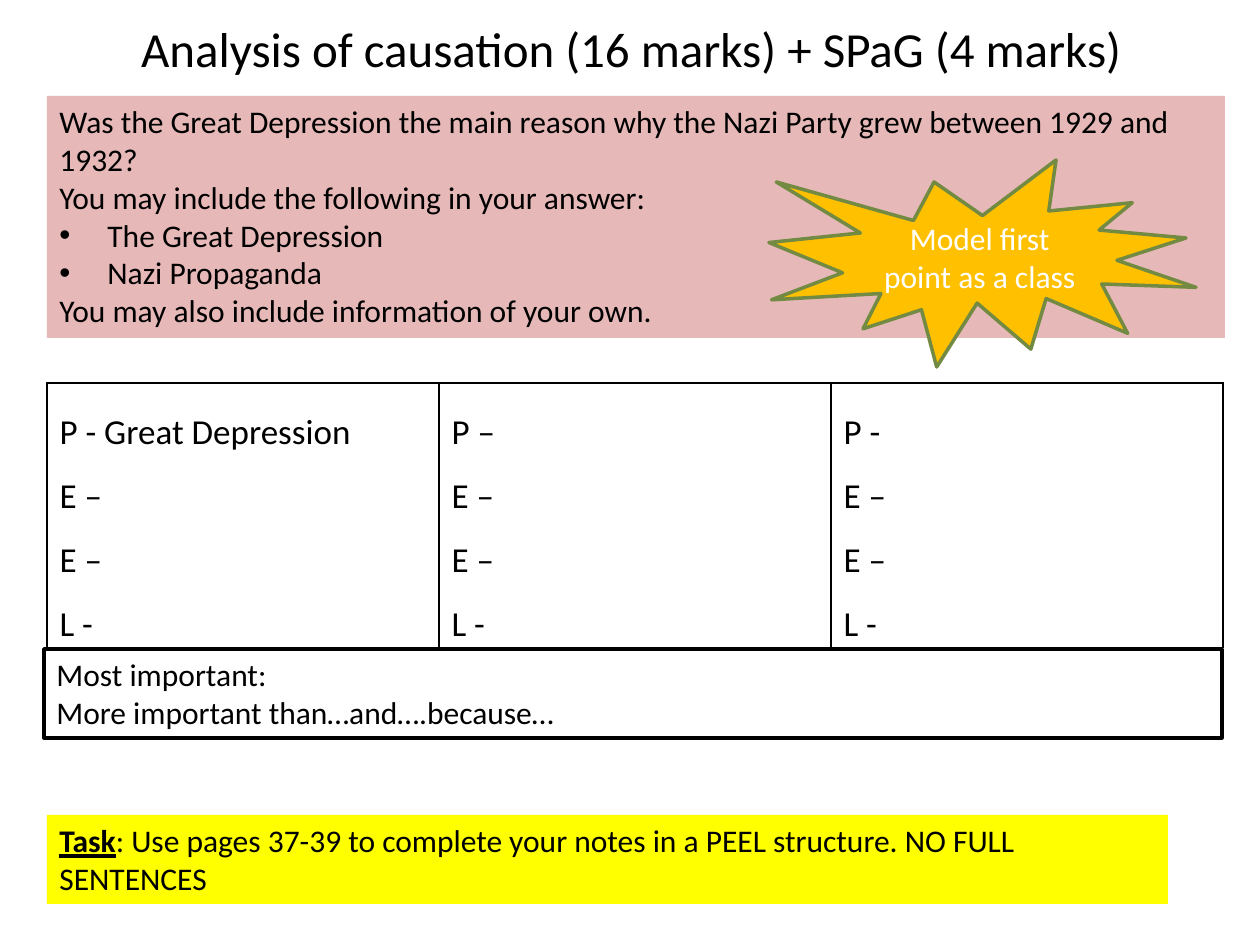
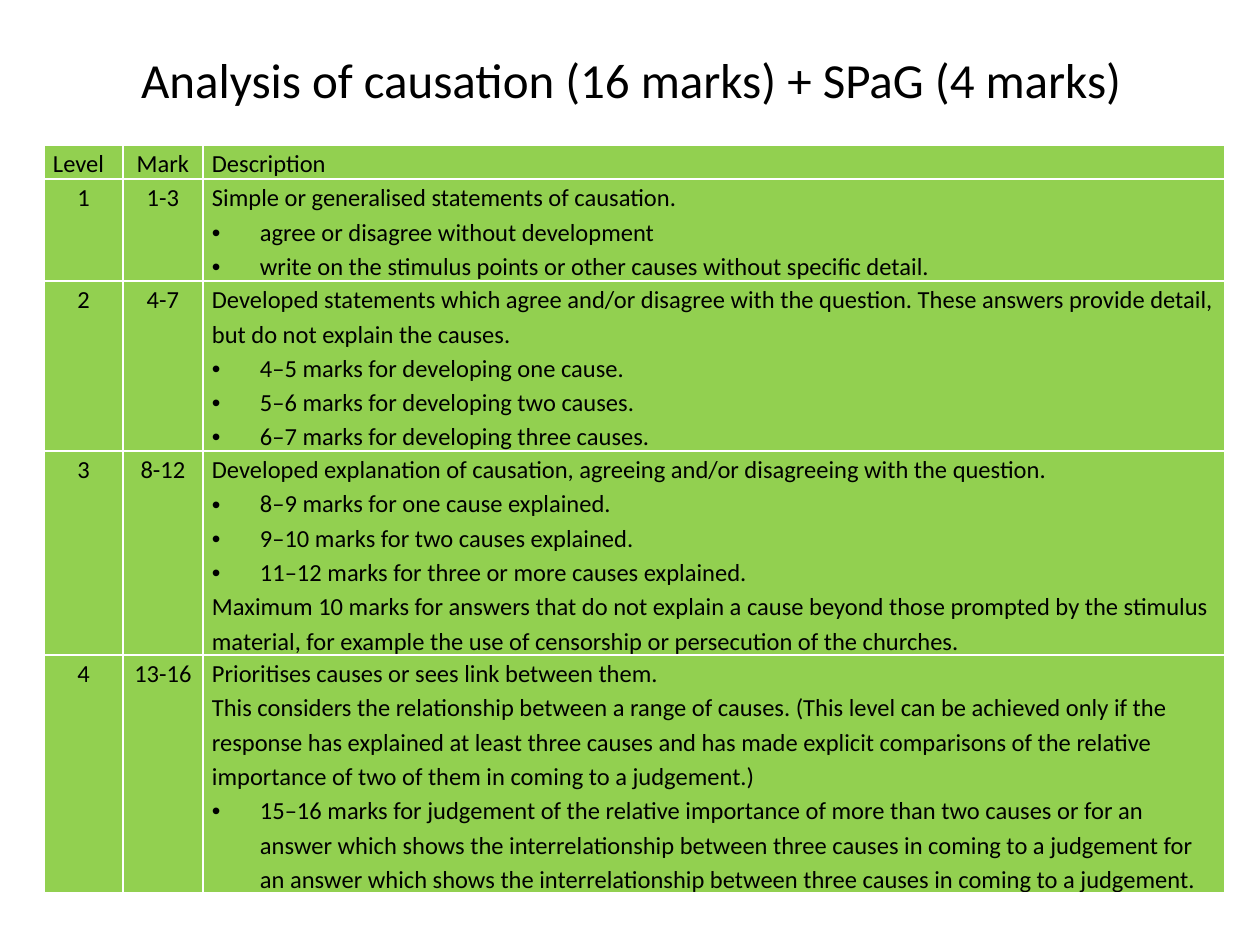
from dataclasses import dataclass

from lxml.etree import SubElement
from pptx import Presentation
from pptx.dml.color import RGBColor as RGB
from pptx.enum.shapes import MSO_SHAPE as Kind
from pptx.enum.text import MSO_ANCHOR as Anchor, MSO_AUTO_SIZE as Auto, PP_ALIGN as Align
from pptx.oxml.ns import qn
from pptx.util import Emu, Pt

PX = 914400 / 126
FONT = "Calibri"
HEX = {
    "black": "000000", "white": "FFFFFF", "pink": "E6B9B8", "gold": "FFC000",
    "olive": "738A42", "yellow": "FFFF00", "green": "92D050",
}
TITLE = "Analysis of causation (16 marks) + SPaG (4 marks)"
BULLET = "• "
INDENT = 48


@dataclass
class Area:
    left: int
    top: int
    width: int
    height: int


@dataclass
class Style:
    size: int
    color: str = "black"
    align: Align = Align.LEFT
    space: float = 1.0


@dataclass
class Box:
    area: Area
    fill: str
    text: str
    style: Style
    line: str = ""
    kind: Kind = Kind.RECTANGLE


@dataclass
class Band:
    level: str
    mark: str
    text: str
    lines: int


BODY = Style(18)
BURST = Style(18, "white", Align.CENTER)
PEEL = Style(20, space=1.5)
LEFT = Style(14, space=1.15)
MID = Style(14, align=Align.CENTER, space=1.15)

TASK = "Task"
QUESTION = """Was the Great Depression the main reason why the Nazi Party grew between 1929 and 1932?
You may include the following in your answer:
• The Great Depression
• Nazi Propaganda
You may also include information of your own."""

BOXES = [
    Box(Area(47, 96, 1178, 242), "pink", QUESTION, BODY),
    Box(Area(769, 160, 427, 207), "gold", "Model first point as a class", BURST,
        "olive", Kind.EXPLOSION1),
    Box(Area(47, 815, 1121, 89), "yellow",
        TASK + ": Use pages 37-39 to complete your notes in a PEEL structure. NO FULL SENTENCES",
        BODY),
]
VERDICT = Box(Area(44, 649, 1178, 89), "white",
              "Most important:\nMore important than…and….because…", BODY, "black")
POINTS = ["P - Great Depression", "P –", "P -"]

BANDS = [
    Band("Level", "Mark", "Description", 1),
    Band("1", "1-3", """Simple or generalised statements of causation.
• agree or disagree without development
• write on the stimulus points or other causes without specific detail.""", 3),
    Band("2", "4-7", """Developed statements which agree and/or disagree with the question. \
These answers provide detail, but do not explain the causes.
• 4–5 marks for developing one cause.
• 5–6 marks for developing two causes.
• 6–7 marks for developing three causes.""", 5),
    Band("3", "8-12", """Developed explanation of causation, agreeing and/or disagreeing with the question.
• 8–9 marks for one cause explained.
• 9–10 marks for two causes explained.
• 11–12 marks for three or more causes explained.
Maximum 10 marks for answers that do not explain a cause beyond those prompted by the \
stimulus material, for example the use of censorship or persecution of the churches.""", 6),
    Band("4", "13-16", """Prioritises causes or sees link between them.
This considers the relationship between a range of causes. (This level can be achieved only \
if the response has explained at least three causes and has made explicit comparisons of the \
relative importance of two of them in coming to a judgement.)
• 15–16 marks for judgement of the relative importance of more than two causes or for an \
answer which shows the interrelationship between three causes in coming to a judgement for \
an answer which shows the interrelationship between three causes in coming to a judgement.""", 7),
]


def px(num: int) -> Emu:
    return Emu(round(num * PX))


def spot(area: Area) -> list[Emu]:
    return [px(num) for num in (area.left, area.top, area.width, area.height)]


def color(name: str) -> RGB:
    return RGB.from_string(HEX[name])


def indent(para) -> None:
    """Give the paragraph a bullet and a hanging indent."""
    props = para._p.get_or_add_pPr()
    props.set("marL", str(px(INDENT)))
    props.set("indent", str(-px(INDENT)))
    SubElement(props, qn("a:buFont"), typeface="Arial")
    SubElement(props, qn("a:buChar"), char=BULLET.strip())


def write(frame, text: str, style: Style) -> None:
    """Fill the frame; lines that start with a bullet sign become list items."""
    frame.text = text
    for para in frame.paragraphs:
        para.alignment = style.align
        para.line_spacing = style.space
        if para.text.startswith(BULLET):
            para.text = para.text.removeprefix(BULLET)
            indent(para)
        for run in para.runs:
            font = run.font
            font.name, font.size = FONT, Pt(style.size)
            font.color.rgb = color(style.color)


def stress(frame, word: str) -> None:
    """Make the first word of the frame bold and underlined."""
    para = frame.paragraphs[0]
    rest = para.runs[0]
    lead = para.add_run()
    lead.text, rest.text = word, rest.text.removeprefix(word)
    lead.font.name, lead.font.size = FONT, rest.font.size
    lead.font.color.rgb = rest.font.color.rgb
    lead.font.bold = lead.font.underline = True
    rest._r.addprevious(lead._r)


def head(slide, tall: int) -> None:
    frame = slide.shapes.add_textbox(*spot(Area(64, 0, 1134, tall))).text_frame
    frame.word_wrap = True
    frame.vertical_anchor = Anchor.MIDDLE
    write(frame, TITLE, Style(28, align=Align.CENTER))


def draw(slide, box: Box) -> None:
    shape = slide.shapes.add_shape(box.kind, *spot(box.area))
    shape.shadow.inherit = False
    shape.fill.solid()
    shape.fill.fore_color.rgb = color(box.fill)
    if box.line:
        shape.line.color.rgb = color(box.line)
        shape.line.width = Pt(2)
    else:
        shape.line.fill.background()
    frame = shape.text_frame
    frame.word_wrap = True
    if box.kind == Kind.RECTANGLE:
        frame.vertical_anchor = Anchor.TOP
        frame.auto_size = Auto.SHAPE_TO_FIT_TEXT
    else:
        frame.vertical_anchor = Anchor.MIDDLE
    write(frame, box.text, box.style)
    if box.text.startswith(TASK):
        stress(frame, TASK)


def edge(cell, name: str) -> None:
    """Draw a thin line on all four sides of the cell."""
    props = cell._tc.get_or_add_tcPr()
    for spot_no, side in enumerate(("lnL", "lnR", "lnT", "lnB")):
        line = SubElement(props, qn(f"a:{side}"), w=str(Pt(1)))
        fill = SubElement(line, qn("a:solidFill"))
        SubElement(fill, qn("a:srgbClr"), val=HEX[name])
        props.insert(spot_no, line)


def grid(slide, left: int, top: int, cols: list[int], rows: list[int]):
    """Add a plain table with the given column widths and row heights."""
    area = Area(left, top, sum(cols), sum(rows))
    table = slide.shapes.add_table(len(rows), len(cols), *spot(area)).table
    table.first_row = table.horz_banding = False
    for col, wide in zip(table.columns, cols):
        col.width = px(wide)
    for row, tall in zip(table.rows, rows):
        row.height = px(tall)
    return table


def plan(slide) -> None:
    head(slide, 96)
    for box in BOXES:
        draw(slide, box)
    table = grid(slide, 47, 383, [392] * len(POINTS), [258])
    for cell, point in zip(table.iter_cells(), POINTS):
        write(cell.text_frame, f"{point}\nE –\nE –\nL -", PEEL)
        cell.fill.background()
        edge(cell, "black")
    draw(slide, VERDICT)


def scheme(slide) -> None:
    head(slide, 158)
    table = grid(slide, 44, 145, [79, 80, 1022], [34 * band.lines for band in BANDS])
    for row, band in zip(table.rows, BANDS):
        first = LEFT if band is BANDS[0] else MID
        parts = (band.level, first), (band.mark, MID), (band.text, LEFT)
        for cell, (text, style) in zip(row.cells, parts):
            cell.margin_left = cell.margin_right = px(9)
            cell.margin_top = cell.margin_bottom = 0
            write(cell.text_frame, text, style)
            cell.fill.solid()
            cell.fill.fore_color.rgb = color("green")
            edge(cell, "white")


def main() -> None:
    deck = Presentation()
    deck.slide_width, deck.slide_height = px(1260), px(945)
    for make in (plan, scheme):
        make(deck.slides.add_slide(deck.slide_layouts[6]))
    deck.save("out.pptx")


if __name__ == "__main__":
    main()
